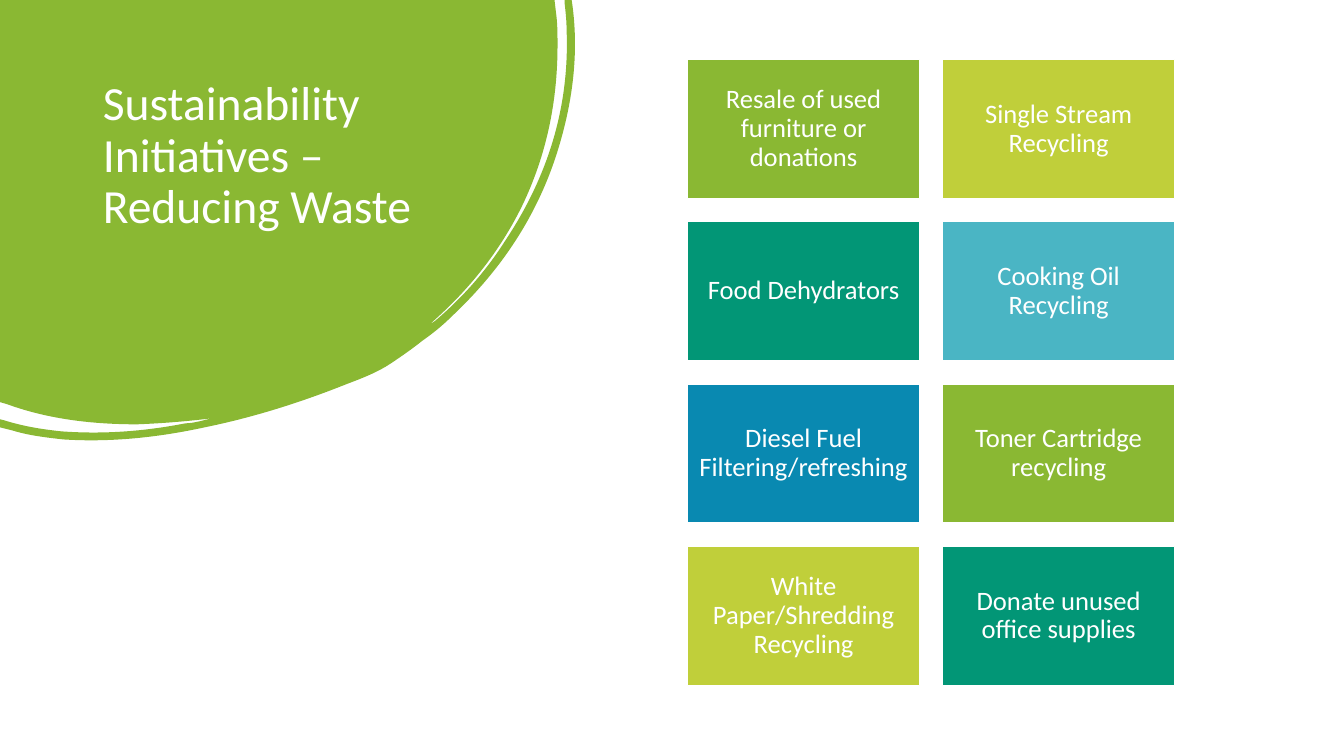
import pptx
import pptx.dml.color
import pptx.enum.shapes
import pptx.enum.text
import pptx.oxml
import pptx.oxml.ns
import pptx.util
import lxml.etree

Inches = pptx.util.Inches
Pt = pptx.util.Pt
PP_ALIGN = pptx.enum.text.PP_ALIGN
MSO_ANCHOR = pptx.enum.text.MSO_ANCHOR
qn = pptx.oxml.ns.qn

FONT = "Calibri"
COLORS = {
    "white": "FFFFFF",
    "green": "8AB833",
    "lime": "C0CF3A",
    "teal": "029676",
    "aqua": "4AB5C4",
    "blue": "0989B1",
}

INITIATIVES = [
    ("Resale of used furniture or donations", "green"),
    ("Single Stream Recycling", "lime"),
    ("Food Dehydrators", "teal"),
    ("Cooking Oil Recycling", "aqua"),
    ("Diesel Fuel Filtering/refreshing", "blue"),
    ("Toner Cartridge recycling", "green"),
    ("White Paper/Shredding Recycling", "lime"),
    ("Donate unused office supplies", "teal"),
]

# Outline of the leaf in inches: one point is a line, three points a Bézier curve
LEAF_OUTLINE = [
    [(0, 0)],
    [(5.5, 0)],
    [(5.52, 0.17)],
    [(5.53, 0.26), (5.53, 0.36), (5.53, 0.45)],
    [(5.53, 1.01), (5.42, 1.54), (5.18, 2.04)],
    [(4.96, 2.49), (4.65, 2.88), (4.27, 3.21)],
    [(4.29, 3.21), (4.3, 3.19), (4.32, 3.18)],
    [(4.59, 2.95), (4.82, 2.69), (5.01, 2.39)],
    [(5.43, 1.76), (5.65, 1.07), (5.62, 0.3)],
    [(5.62, 0.21), (5.61, 0.12), (5.6, 0.03)],
    [(5.6, 0)],
    [(5.67, 0)],
    [(5.68, 0.07)],
    [(5.74, 0.54), (5.68, 1.02), (5.53, 1.5)],
    [(5.33, 2.14), (4.97, 2.68), (4.48, 3.14)],
    [(4.39, 3.23), (4.29, 3.31), (4.19, 3.38)],
    [(4.09, 3.46), (3.99, 3.53), (3.87, 3.61)],
    [(3.75, 3.69), (3.6, 3.75), (3.44, 3.81)],
    [(2.99, 3.99), (2.52, 4.14), (2.03, 4.24)],
    [(1.57, 4.34), (1.1, 4.39), (0.63, 4.36)],
    [(0.45, 4.34), (0.28, 4.32), (0.12, 4.27)],
    [(0, 4.24)],
    [(0, 4.16)],
    [(0.04, 4.17)],
    [(0.23, 4.23), (0.42, 4.26), (0.61, 4.28)],
    [(1.03, 4.31), (1.43, 4.28), (1.84, 4.2)],
    [(1.89, 4.2), (1.93, 4.19), (1.98, 4.18)],
    [(2.02, 4.17), (2.06, 4.16), (2.1, 4.15)],
    [(1.86, 4.18), (1.61, 4.2), (1.36, 4.21)],
    [(0.92, 4.21), (0.48, 4.16), (0.07, 4.01)],
    [(0, 3.99)],
]


def rgb(name):
    return pptx.dml.color.RGBColor.from_string(COLORS[name])


def format_text(paragraph, size, align):
    paragraph.alignment = align
    paragraph.line_spacing = 0.9
    paragraph.font.name = FONT
    paragraph.font.size = Pt(size)
    paragraph.font.color.rgb = rgb("white")


def bend_segments(freeform, outline):
    """Turn the straight segments that have control points into curves."""
    lines = list(freeform.element.iter(qn("a:lnTo")))
    for line, segment in zip(lines, outline[1:]):
        if len(segment) == 3:
            line.clear()
            curve = lxml.etree.Element(qn("a:cubicBezTo"))
            for x, y in segment:
                lxml.etree.SubElement(curve, qn("a:pt"), x=str(Inches(x)), y=str(Inches(y)))
            line.getparent().replace(line, curve)


def add_leaf(slide, left, top, width, height):
    anchors = [(Inches(x), Inches(y)) for x, y in (segment[-1] for segment in LEAF_OUTLINE)]
    builder = slide.shapes.build_freeform(*anchors[0])
    builder.add_line_segments(anchors[1:], close=True)
    leaf = builder.convert_to_shape(Inches(left), Inches(top))
    bend_segments(leaf, LEAF_OUTLINE)
    # Let the box reach as far as the curves do
    leaf.width, leaf.height = Inches(width), Inches(height)
    for contour in leaf.element.iter(qn("a:path")):
        contour.set("w", str(leaf.width))
        contour.set("h", str(leaf.height))
    leaf.shadow.inherit = False
    leaf.fill.solid()
    leaf.fill.fore_color.rgb = rgb("green")
    leaf.line.fill.background()


def place_title(slide, left, top, width, height):
    title = slide.shapes.title
    title.left, title.top = Inches(left), Inches(top)
    title.width, title.height = Inches(width), Inches(height)
    frame = title.text_frame
    frame.text = "Sustainability Initiatives – Reducing Waste"
    frame.word_wrap = True
    frame.auto_size = pptx.enum.text.MSO_AUTO_SIZE.NONE
    frame.vertical_anchor = MSO_ANCHOR.TOP
    format_text(frame.paragraphs[0], 34, PP_ALIGN.LEFT)
    # Bring the title in front of the leaf
    title.element.getparent().append(title.element)


def add_card(slide, left, top, width, height, label, color):
    card = slide.shapes.add_shape(
        pptx.enum.shapes.MSO_SHAPE.RECTANGLE,
        Inches(left), Inches(top), Inches(width), Inches(height))
    card.shadow.inherit = False
    card.fill.solid()
    card.fill.fore_color.rgb = rgb(color)
    card.line.color.rgb = rgb("white")
    card.line.width = Pt(1)
    frame = card.text_frame
    frame.text = label
    frame.word_wrap = True
    frame.vertical_anchor = MSO_ANCHOR.MIDDLE
    frame.margin_left = frame.margin_right = Inches(0.08)
    frame.margin_top = frame.margin_bottom = Inches(0.08)
    format_text(frame.paragraphs[0], 19, PP_ALIGN.CENTER)


def add_initiatives(slide, left, top, width, height, columns=2, gap=0.23):
    rows = len(INITIATIVES) // columns
    card_width = (width - gap * (columns - 1)) / columns
    card_height = (height - gap * (rows - 1)) / rows
    for index, (label, color) in enumerate(INITIATIVES):
        row, column = divmod(index, columns)
        add_card(slide, left + column * (card_width + gap), top + row * (card_height + gap),
                 card_width, card_height, label, color)


def main():
    deck = pptx.Presentation()
    deck.slide_width, deck.slide_height = Inches(13.33), Inches(7.5)
    slide = deck.slides.add_slide(deck.slide_layouts.get_by_name("Title Only"))
    add_leaf(slide, 0, 0, 5.71, 4.37)
    place_title(slide, 0.92, 0.74, 3.52, 2.22)
    add_initiatives(slide, 6.82, 0.59, 4.83, 6.21)
    deck.save("out.pptx")


if __name__ == "__main__":
    main()
